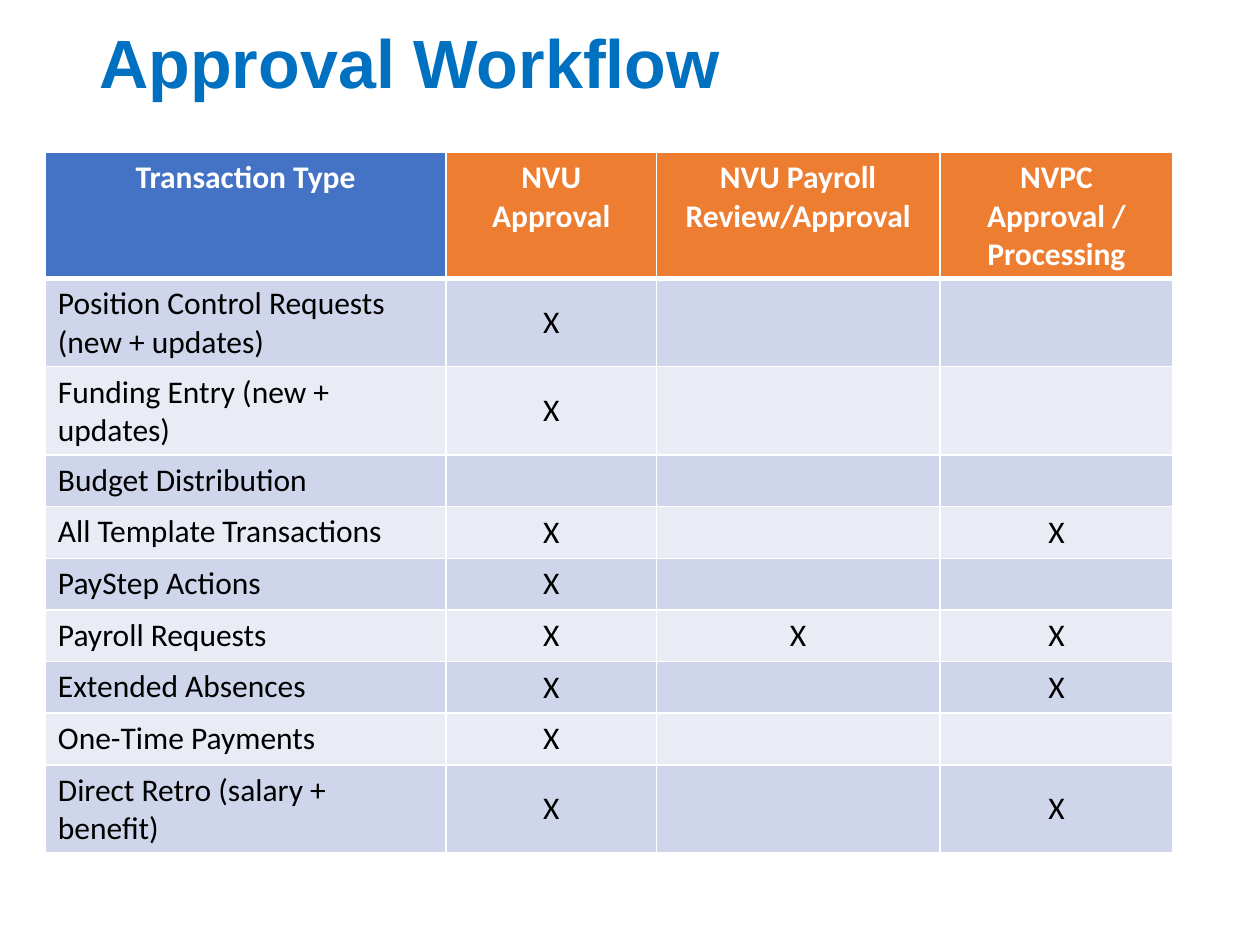
import pptx
import pptx.dml.color
import pptx.enum.text
import pptx.oxml
import pptx.oxml.ns
import pptx.util
from pptx.util import Inches

ALIGN = pptx.enum.text.PP_ALIGN
ANCHOR = pptx.enum.text.MSO_ANCHOR

HEADERS = ["Transaction Type", "NVU Approval", "NVU Payroll Review/Approval",
           "NVPC Approval / Processing"]
TRANSACTIONS = [
    ("Position Control Requests (new + updates)", "X", "", ""),
    ("Funding Entry (new + updates)", "X", "", ""),
    ("Budget Distribution", "", "", ""),
    ("All Template Transactions", "X", "", "X"),
    ("PayStep Actions", "X", "", ""),
    ("Payroll Requests", "X", "X", "X"),
    ("Extended Absences", "X", "", "X"),
    ("One-Time Payments", "X", "", ""),
    ("Direct Retro (salary + benefit)", "X", "", "X"),
]
COLUMN_WIDTHS = [3.18, 1.67, 2.25, 1.85]
ROW_HEIGHT = 0.41


def colour(value):
    return pptx.dml.color.RGBColor.from_string(value)


def apply_format(target, values):
    for name, value in values.items():
        setattr(target, name, value)


class SlideBuilder:
    title_font = {"name": "Arial", "size": pptx.util.Pt(39), "bold": True}
    header_font = {"name": "Calibri", "size": pptx.util.Pt(18), "bold": True}
    body_font = {**header_font, "bold": False}
    title_colour = "0070C0"
    header_fills = ["4472C4", "ED7D31"]
    band_fills = ["CFD5EA", "E9EBF5"]
    border_colour = "FFFFFF"

    def __init__(self, slide):
        self.slide = slide

    def add_text(self, frame, text, font, text_colour, align):
        para = frame.paragraphs[0]
        para.alignment = align
        span = para.add_run()
        span.text = text
        apply_format(span.font, font)
        span.font.color.rgb = colour(text_colour)
        return para

    def title(self, text, left, top, width, height):
        box = self.slide.shapes.add_textbox(
            Inches(left), Inches(top), Inches(width), Inches(height))
        apply_format(box.text_frame, {
            "word_wrap": True, "vertical_anchor": ANCHOR.MIDDLE,
            "margin_bottom": Inches(0.16)})
        para = self.add_text(box.text_frame, text, self.title_font,
                             self.title_colour, ALIGN.LEFT)
        para.line_spacing = 0.9

    def borders(self, cell, widths):
        """Draw cell borders; widths maps L, R, T and B to points."""
        properties = cell._tc.get_or_add_tcPr()
        for position, (side, width) in enumerate(widths.items()):
            line = pptx.oxml.parse_xml(
                f'<a:ln{side} {pptx.oxml.ns.nsdecls("a")} w="{pptx.util.Pt(width)}">'
                f'<a:solidFill><a:srgbClr val="{self.border_colour}"/></a:solidFill>'
                f'</a:ln{side}>')
            properties.insert(position, line)

    def table(self, headers, records, left, top, widths, row_height):
        rows = [headers, *records]
        table = self.slide.shapes.add_table(
            len(rows), len(widths), Inches(left), Inches(top),
            Inches(sum(widths)), Inches(row_height * len(rows))).table
        for column, width in zip(table.columns, widths):
            column.width = Inches(width)
        for row_index, values in enumerate(rows):
            table.rows[row_index].height = Inches(row_height)
            for column_index, text in enumerate(values):
                self.cell(table.cell(row_index, column_index), text,
                          row_index, column_index)

    def cell(self, cell, text, row, column):
        is_header = row == 0
        if is_header:
            fill = self.header_fills[min(column, 1)]
            font, text_colour = self.header_font, "FFFFFF"
        else:
            fill = self.band_fills[(row - 1) % 2]
            font, text_colour = self.body_font, "000000"
        cell.fill.solid()
        cell.fill.fore_color.rgb = colour(fill)
        self.borders(cell, {"L": 1, "R": 1, "T": 3 if row == 1 else 1,
                            "B": 3 if is_header else 1})
        if not is_header and column > 0:
            cell.vertical_anchor = ANCHOR.MIDDLE
        if text:
            align = ALIGN.CENTER if is_header or column > 0 else ALIGN.LEFT
            self.add_text(cell.text_frame, text, font, text_colour, align)


def main():
    deck = pptx.Presentation()
    deck.slide_width, deck.slide_height = Inches(10), Inches(7.5)
    page = SlideBuilder(deck.slides.add_slide(deck.slide_layouts[6]))
    page.title("Approval Workflow", 0.69, 0.16, 8.62, 0.84)
    page.table(HEADERS, TRANSACTIONS, 0.36, 1.21, COLUMN_WIDTHS, ROW_HEIGHT)
    deck.save("out.pptx")


if __name__ == "__main__":
    main()
